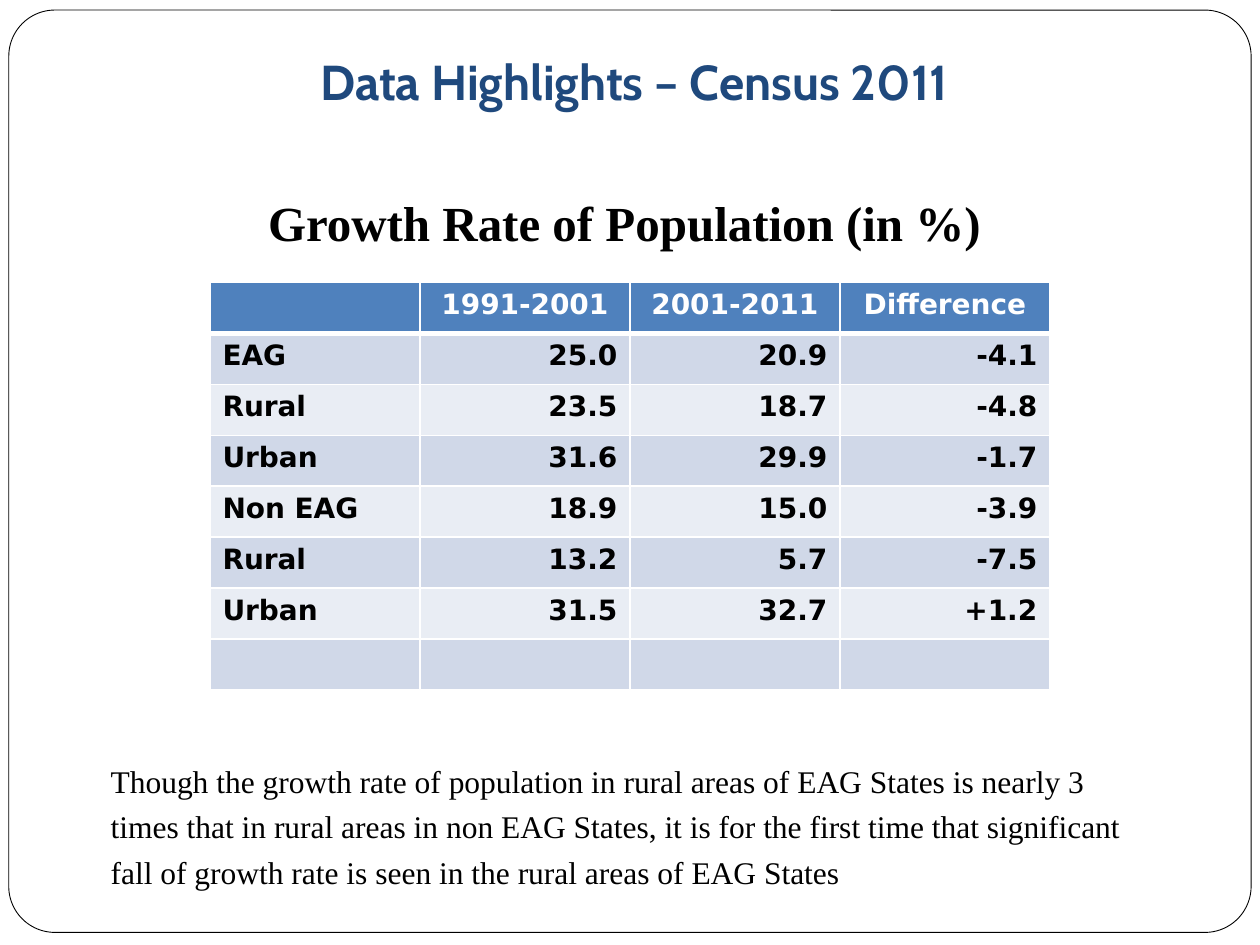
from lxml.etree import SubElement
from pptx import Presentation
from pptx.dml.color import RGBColor
from pptx.enum.shapes import MSO_SHAPE as Shape
from pptx.enum.text import MSO_ANCHOR as Anchor, MSO_AUTO_SIZE as AutoSize, PP_ALIGN as Align
from pptx.oxml.ns import qn
from pptx.util import Inches, Pt

TITLE = "Data Highlights – Census 2011"
SUBTITLE = "Growth Rate of Population (in %)"
ROWS = [
    ("", "1991-2001", "2001-2011", "Difference"),
    ("EAG", "25.0", "20.9", "-4.1"),
    ("Rural", "23.5", "18.7", "-4.8"),
    ("Urban", "31.6", "29.9", "-1.7"),
    ("Non EAG", "18.9", "15.0", "-3.9"),
    ("Rural", "13.2", "5.7", "-7.5"),
    ("Urban", "31.5", "32.7", "+1.2"),
    ("", "", "", ""),
]
NOTE = (
    "Though the growth rate of population in rural areas of EAG States is nearly 3 "
    "times that in rural areas in non EAG States, it is for the first time that "
    "significant fall of growth rate is seen in the rural areas of EAG States"
)

WHITE = RGBColor(0xFF, 0xFF, 0xFF)
BLACK = RGBColor(0, 0, 0)
NAVY = RGBColor(0x1F, 0x49, 0x7D)
HEADER_BLUE = RGBColor(0x4F, 0x81, 0xBD)
BANDS = [RGBColor(0xE9, 0xED, 0xF4), RGBColor(0xD0, 0xD8, 0xE8)]
SERIF = "Times New Roman"


def box(left, top, width, height):
    return [Inches(length) for length in (left, top, width, height)]


def style(paragraph, font_name, size, color, bold=False, align=Align.LEFT):
    paragraph.alignment = align
    font = paragraph.font
    font.name, font.size, font.bold = font_name, Pt(size), bold
    font.color.rgb = color


def add_text(slide, place, text, size, **look):
    frame = slide.shapes.add_textbox(*place).text_frame
    frame.word_wrap = True
    paragraph = frame.paragraphs[0]
    paragraph.text = text
    style(paragraph, SERIF, size, BLACK, **look)
    return paragraph


def add_borders(cell, bottom):
    properties = cell._tc.get_or_add_tcPr()
    for side, width in (("L", 1), ("R", 1), ("T", 1), ("B", bottom)):
        line = SubElement(properties, qn(f"a:ln{side}"), w=str(Pt(width)))
        fill = SubElement(line, qn("a:solidFill"))
        SubElement(fill, qn("a:srgbClr"), val=str(WHITE))


def add_growth_table(slide):
    row_count, column_count = len(ROWS), len(ROWS[0])
    width, height = prs.slide_width * 2 // 3, Inches(3.24)
    left = (prs.slide_width - width) // 2
    table = slide.shapes.add_table(
        row_count, column_count, left, Inches(2.24), width, height
    ).table
    for r, row in enumerate(ROWS):
        header = r == 0
        for c, value in enumerate(row):
            cell = table.cell(r, c)
            cell.text = value
            align = Align.CENTER if header else Align.RIGHT if c else Align.LEFT
            style(cell.text_frame.paragraphs[0], "DejaVu Sans", 16,
                  WHITE if header else BLACK, True, align)
            add_borders(cell, 3 if header else 1)
            cell.fill.solid()
            cell.fill.fore_color.rgb = HEADER_BLUE if header else BANDS[r % 2]


prs = Presentation()
prs.slide_width, prs.slide_height = Inches(10), Inches(7.5)
slide = prs.slides.add_slide(prs.slide_layouts[5])

frame = slide.shapes.add_shape(Shape.ROUNDED_RECTANGLE, *box(0.07, 0.08, 9.86, 7.32))
frame.adjustments[0] = 0.05
frame.shadow.inherit = False
frame.fill.solid()
frame.fill.fore_color.rgb = WHITE
frame.line.color.rgb = BLACK
frame.line.width = Pt(0.5)
slide.shapes._spTree.insert(2, frame._element)

note = add_text(slide, box(0.78, 5.94, 8.36, 1.17), NOTE, 18)
note.line_spacing = 1.2
note.space_before = note.space_after = Pt(6)

add_growth_table(slide)

title = slide.shapes.title
title.left, title.top, title.width, title.height = box(0.94, 0.33, 8.2, 0.55)
heading = title.text_frame
heading.text = TITLE
heading.auto_size = AutoSize.NONE
heading.vertical_anchor = Anchor.BOTTOM
heading.margin_left = heading.margin_top = heading.margin_bottom = 0
heading.margin_right = Inches(0.02)
style(heading.paragraphs[0], "Cabin", 28, NAVY, True, Align.CENTER)

add_text(slide, box(2, 1.48, 5.91, 0.57), SUBTITLE, 28, bold=True, align=Align.CENTER)

prs.save("out.pptx")
